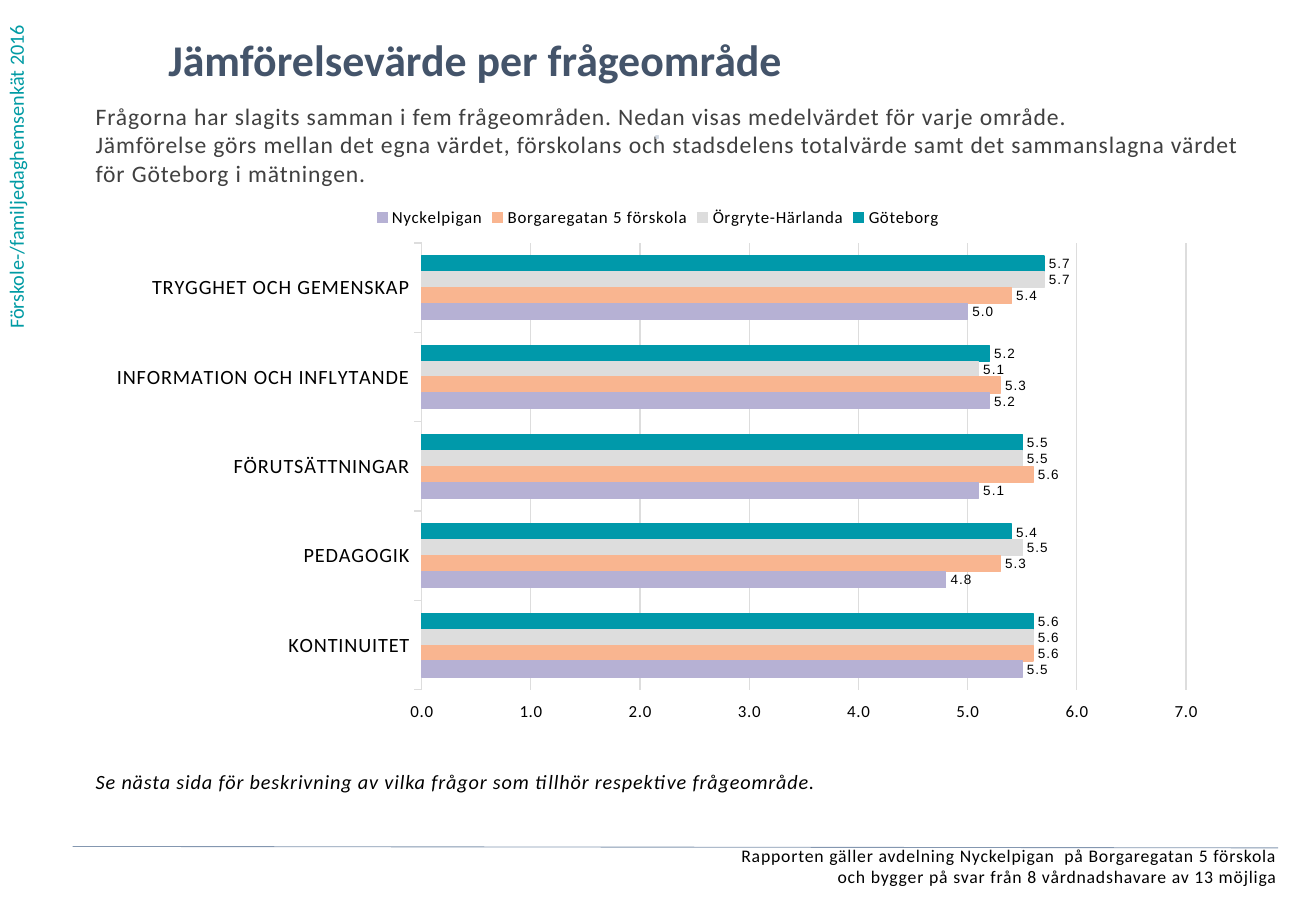
from dataclasses import dataclass

from lxml.etree import SubElement
from pptx import Presentation
from pptx.chart.data import CategoryChartData as ChartData
from pptx.dml.color import RGBColor as Rgb
from pptx.enum.chart import XL_CHART_TYPE as Kind, XL_LEGEND_POSITION as Spot
from pptx.enum.chart import XL_LABEL_POSITION as Place
from pptx.enum.chart import XL_TICK_LABEL_POSITION as Side
from pptx.enum.chart import XL_TICK_MARK as Tick
from pptx.enum.shapes import MSO_CONNECTOR as Link
from pptx.enum.text import PP_ALIGN as Align
from pptx.oxml import parse_xml
from pptx.oxml.ns import qn
from pptx.util import Cm, Pt

COLORS = {
    "black": "000000", "dark": "404040", "title": "44546A", "side": "009BA4",
    "dot": "D2D9E2", "rule": "8497B0", "grid": "DDDDDD", "teal": "0099AA",
    "gray": "DDDDDD", "peach": "F9B590", "lilac": "B6B1D4",
}
FACE = "Calibri"
FORMAT = "0.0;0.0"


@dataclass
class Note:
    text: str
    box: tuple[float, float, float, float]
    size: float
    color: str = "black"
    bold: bool = False
    slant: bool = False
    align: Align = Align.LEFT
    space: int = 50
    turned: bool = False


@dataclass
class Group:
    name: str
    color: str
    values: tuple[float, ...]


NOTES = [
    Note("Förskole-/familjedaghemsenkät 2016", (-0.05, 0, 1.02, 7.13), 12,
         "side", space=0, turned=True),
    Note("Jämförelsevärde per frågeområde", (3.52, 0.69, 21.18, 1.45), 26,
         "title", bold=True, space=0),
    Note("Frågorna har slagits samman i fem frågeområden. Nedan visas "
         "medelvärdet för varje område.\n"
         "Jämförelse görs mellan det egna värdet, förskolans och stadsdelens "
         "totalvärde samt det sammanslagna värdet för Göteborg i mätningen.",
         (2, 2.13, 24.03, 2.57), 14, "dark"),
    Note("Rapporten gäller avdelning Nyckelpigan  på Borgaregatan 5 förskola\n"
         "och bygger på svar från 8 vårdnadshavare av 13 möjliga",
         (0.3, 17.67, 26.4, 1.09), 10.5, align=Align.RIGHT),
    Note("⋅", (9.83, 2.59, 7.82, 0.99), 12, "dot", bold=True,
         align=Align.CENTER),
    Note("Se nästa sida för beskrivning av vilka frågor som tillhör "
         "respektive frågeområde.", (2, 16.08, 23.5, 0.7), 12, slant=True),
]
AREAS = ["TRYGGHET OCH GEMENSKAP", "INFORMATION OCH INFLYTANDE",
         "FÖRUTSÄTTNINGAR", "PEDAGOGIK", "KONTINUITET"]
GROUPS = [
    Group("Göteborg", "teal", (5.7, 5.2, 5.5, 5.4, 5.6)),
    Group("Örgryte-Härlanda", "gray", (5.7, 5.1, 5.5, 5.5, 5.6)),
    Group("Borgaregatan 5 förskola", "peach", (5.4, 5.3, 5.6, 5.3, 5.6)),
    Group("Nyckelpigan", "lilac", (5.0, 5.2, 5.1, 4.8, 5.5)),
]


def tint(name: str) -> Rgb:
    return Rgb.from_string(COLORS[name])


def style(font, size: float, color: str = "black", face: str = FACE,
          space: int = 50) -> None:
    font.size, font.name = Pt(size), face
    font.color.rgb = tint(color)
    if space:
        font._rPr.set("spc", str(space))


def stroke(line, color: str, width: float = 0.75) -> None:
    line.color.rgb = tint(color)
    line.width = Pt(width)


def add_note(slide, note: Note) -> None:
    frame = slide.shapes.add_textbox(*map(Cm, note.box)).text_frame
    frame.word_wrap = True
    if note.turned:
        frame._txBody.bodyPr.set("vert", "vert270")
    else:
        frame.margin_left = frame.margin_right = 0
        frame.margin_top = frame.margin_bottom = 0
    frame.text = note.text
    for para in frame.paragraphs:
        para.alignment = note.align
        style(para.font, note.size, note.color, space=note.space)
        para.font.bold, para.font.italic = note.bold, note.slant


def set_plot(chart, left: float, top: float, width: float,
             height: float) -> None:
    area = chart._chartSpace.chart.plotArea
    for old in area.findall(qn("c:layout")):
        area.remove(old)
    parts = "".join(f'<c:{tag} val="{val}"/>' for tag, val in (
        ("layoutTarget", "inner"), ("xMode", "edge"), ("yMode", "edge"),
        ("x", left), ("y", top), ("w", width), ("h", height)))
    area.insert(0, parse_xml(
        '<c:layout xmlns:c="http://schemas.openxmlformats.org/drawingml/2006/'
        f'chart"><c:manualLayout>{parts}</c:manualLayout></c:layout>'))


def add_bars(slide) -> None:
    data = ChartData(number_format="0.0")
    data.categories = AREAS
    for group in GROUPS:
        data.add_series(group.name, group.values)
    chart = slide.shapes.add_chart(
        Kind.BAR_CLUSTERED, *map(Cm, (2, 4.07, 23.5, 11.26)), data).chart
    chart.has_title = False
    style(chart.font, 10)
    set_plot(chart, 0.29, 0.09, 0.68, 0.83)

    # Legend
    chart.has_legend = True
    chart.legend.position = Spot.TOP
    chart.legend.include_in_layout = False
    style(chart.legend.font, 10)

    # Axes
    areas, scale = chart.category_axis, chart.value_axis
    areas.reverse_order = True
    areas.major_tick_mark = scale.major_tick_mark = Tick.OUTSIDE
    stroke(areas.format.line, "grid")
    style(areas.tick_labels.font, 12)
    scale.minimum_scale, scale.maximum_scale, scale.major_unit = 0, 7, 1
    scale.tick_label_position = Side.HIGH
    scale.format.line.fill.background()
    stroke(scale.major_gridlines.format.line, "grid")
    scale.tick_labels.number_format = FORMAT
    scale.tick_labels.number_format_is_linked = False
    style(scale.tick_labels.font, 10)

    # Bars
    plot = chart.plots[0]
    plot.gap_width, plot.overlap = 162, 0
    plot.vary_by_categories = False
    for bars, group in zip(plot.series, GROUPS):
        bars.format.fill.solid()
        bars.format.fill.fore_color.rgb = tint(group.color)
        stroke(bars.format.line, group.color)
        labels = bars.data_labels
        labels.show_value = True
        labels.position = Place.OUTSIDE_END
        labels.number_format = FORMAT
        labels.number_format_is_linked = False
        style(labels.font, 8, face="Arial")


def add_rule(slide) -> None:
    rule = slide.shapes.add_connector(
        Link.STRAIGHT, *map(Cm, (1.52, 17.7, 26.72, 17.73)))
    stroke(rule.line, "rule", 0.5)
    SubElement(rule._element.spPr, qn("a:effectLst"))


def main() -> None:
    deck = Presentation()
    deck.slide_width, deck.slide_height = Cm(27.51), Cm(19.05)
    slide = deck.slides.add_slide(deck.slide_layouts[6])
    for note in NOTES:
        add_note(slide, note)
    add_bars(slide)
    add_rule(slide)
    deck.save("out.pptx")


if __name__ == "__main__":
    main()
